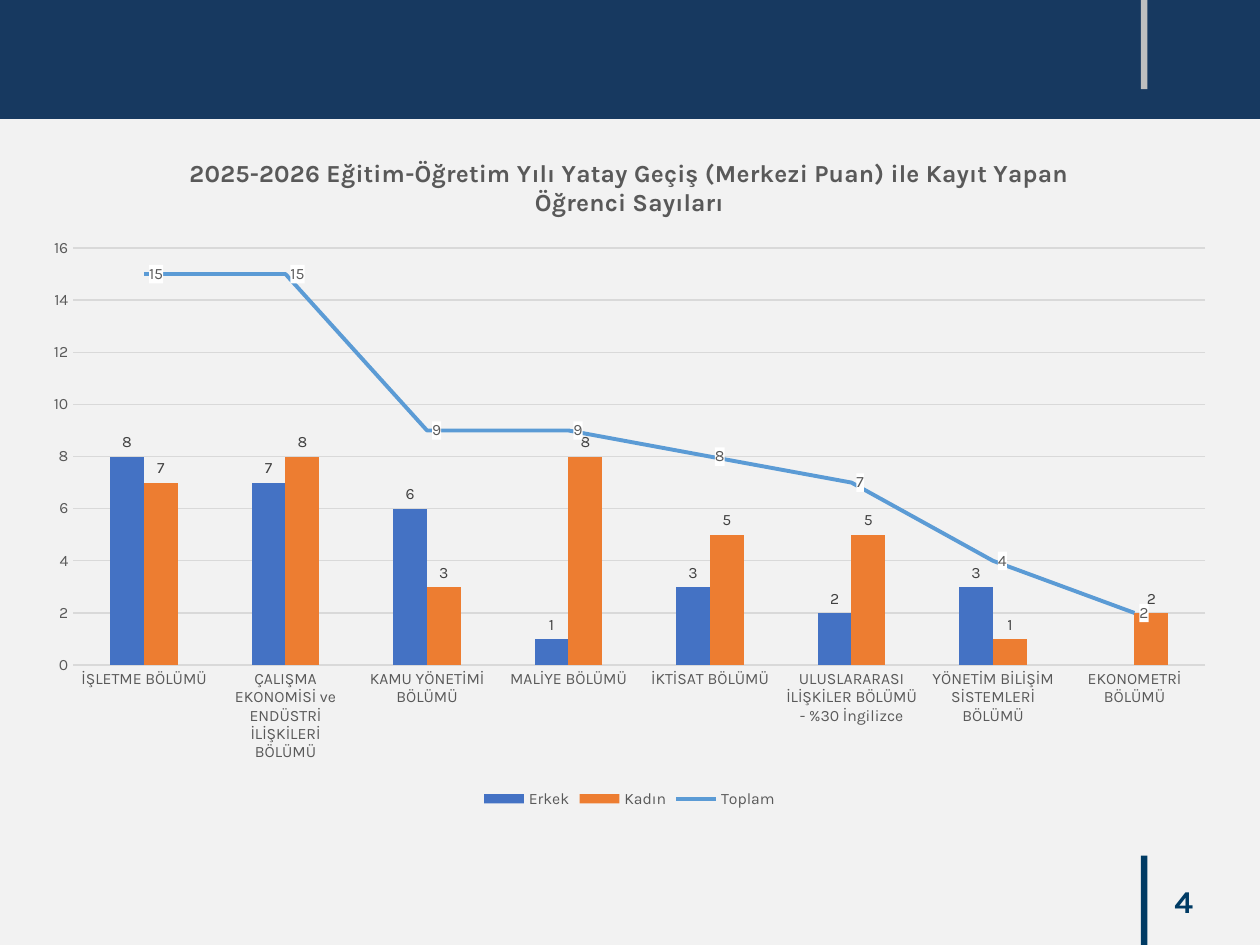
from lxml import etree
from pptx import Presentation
from pptx.chart.data import CategoryChartData
from pptx.dml.color import RGBColor
from pptx.enum.chart import (XL_CHART_TYPE, XL_LABEL_POSITION, XL_LEGEND_POSITION,
                             XL_MARKER_STYLE, XL_TICK_MARK)
from pptx.enum.shapes import MSO_SHAPE
from pptx.enum.text import MSO_ANCHOR, PP_ALIGN
from pptx.oxml import parse_xml
from pptx.oxml.ns import nsdecls, qn
from pptx.util import Cm, Pt

RECTANGLE = MSO_SHAPE.RECTANGLE
CLUSTERED = XL_CHART_TYPE.COLUMN_CLUSTERED
OUTSIDE, RIGHT_OF_POINT = XL_LABEL_POSITION.OUTSIDE_END, XL_LABEL_POSITION.RIGHT
BOTTOM, NO_TICK, NO_MARKER = XL_LEGEND_POSITION.BOTTOM, XL_TICK_MARK.NONE, XL_MARKER_STYLE.NONE
MIDDLE, CENTER, RIGHT = MSO_ANCHOR.MIDDLE, PP_ALIGN.CENTER, PP_ALIGN.RIGHT

COLORS = {"paper": "F2F2F2", "banner": "173960", "navy": "003B64", "silver": "BFBFBF",
          "grid": "D9D9D9", "text": "595959", "label": "404040", "white": "FFFFFF",
          "Erkek": "4472C4", "Kadın": "ED7D31", "Toplam": "5B9BD5"}
FONT = "Karla"
TITLE = "2025-2026 Eğitim-Öğretim Yılı Yatay Geçiş (Merkezi Puan) ile Kayıt Yapan Öğrenci Sayıları"
PAGE_NUMBER = "4"
DEPARTMENTS = [
    ("İŞLETME BÖLÜMÜ", 8, 7, 15),
    ("ÇALIŞMA EKONOMİSİ ve ENDÜSTRİ İLİŞKİLERİ BÖLÜMÜ", 7, 8, 15),
    ("KAMU YÖNETİMİ BÖLÜMÜ", 6, 3, 9),
    ("MALİYE BÖLÜMÜ", 1, 8, 9),
    ("İKTİSAT BÖLÜMÜ", 3, 5, 8),
    ("ULUSLARARASI İLİŞKİLER BÖLÜMÜ - %30 İngilizce", 2, 5, 7),
    ("YÖNETİM BİLİŞİM SİSTEMLERİ BÖLÜMÜ", 3, 1, 4),
    ("EKONOMETRİ BÖLÜMÜ", None, 2, 2),
]
SERIES = ["Erkek", "Kadın", "Toplam"]
BANDS = [
    (0, 0, 25.4, 2.4, "banner"),
    (23, 17.25, 0.13, 1.8, "navy"),
    (23, 0, 0.13, 1.8, "silver"),
]


def rgb(name):
    return RGBColor.from_string(COLORS[name])


def style(font, size=9, color="text", bold=False):
    font.name, font.size, font.bold = FONT, Pt(size), bold
    font.color.rgb = rgb(color)


def write(frame, text, align=CENTER, **look):
    paragraph = frame.paragraphs[0]
    paragraph.alignment = align
    run = paragraph.add_run()
    run.text = text
    style(run.font, **look)


def add_band(slide, left, top, width, height, color):
    band = slide.shapes.add_shape(RECTANGLE, Cm(left), Cm(top), Cm(width), Cm(height))
    band.shadow.inherit = False
    band.fill.solid()
    band.fill.fore_color.rgb = rgb(color)
    band.line.fill.background()


def move_total_to_line(columns):
    total = columns.findall(qn("c:ser"))[-1]
    for bar_setting in total.findall(qn("c:invertIfNegative")):
        total.remove(bar_setting)
    line_plot = parse_xml(f'<c:lineChart {nsdecls("c")}><c:grouping val="standard"/>'
                          '<c:varyColors val="0"/></c:lineChart>')
    line_plot.append(total)
    etree.SubElement(line_plot, qn("c:marker")).set("val", "1")
    for axis in columns.findall(qn("c:axId")):
        etree.SubElement(line_plot, qn("c:axId")).set("val", axis.get("val"))
    columns.addnext(line_plot)


def label_values(series, position, color):
    labels = series.data_labels
    labels.show_value = True
    labels.position = position
    style(labels.font, color=color)


def fill_labels(line_plot, color):
    label_text = line_plot.find(f'.//{qn("c:dLbls")}/{qn("c:txPr")}')
    label_text.addprevious(parse_xml(
        f'<c:spPr {nsdecls("c", "a")}><a:solidFill><a:srgbClr val="{COLORS[color]}"/>'
        '</a:solidFill></c:spPr>'))


def add_enrolment_chart(slide):
    names, *columns = zip(*DEPARTMENTS)
    enrolment = CategoryChartData()
    enrolment.categories = names
    for name, values in zip(SERIES, columns):
        enrolment.add_series(name, values)
    chart = slide.shapes.add_chart(CLUSTERED, Cm(0.6), Cm(2.67), Cm(24.18), Cm(13.72),
                                   enrolment).chart
    style(chart.font)
    write(chart.chart_title.text_frame, TITLE, size=14, bold=True)
    chart.has_legend = True
    chart.legend.position = BOTTOM
    chart.legend.include_in_layout = False
    style(chart.legend.font)

    departments, students = chart.category_axis, chart.value_axis
    for axis in (departments, students):
        axis.major_tick_mark = axis.minor_tick_mark = NO_TICK
        style(axis.tick_labels.font)
    students.format.line.fill.background()
    students.minimum_scale, students.maximum_scale, students.major_unit = 0, 16, 2
    for rule in (departments.format.line, students.major_gridlines.format.line):
        rule.color.rgb = rgb("grid")
        rule.width = Pt(0.75)

    bars = chart.plots[0]
    bars.vary_by_categories = False
    bars.gap_width, bars.overlap = 219, 0
    plot_area = chart.element.find(f'{qn("c:chart")}/{qn("c:plotArea")}')
    move_total_to_line(plot_area.find(qn("c:barChart")))
    for gender in bars.series:
        gender.format.fill.solid()
        gender.format.fill.fore_color.rgb = rgb(gender.name)
        label_values(gender, OUTSIDE, "label")

    total = chart.plots[1].series[0]
    total.smooth = False
    total.marker.style = NO_MARKER
    total.format.line.color.rgb = rgb(total.name)
    total.format.line.width = Pt(2.25)
    label_values(total, RIGHT_OF_POINT, "text")
    fill_labels(plot_area.find(qn("c:lineChart")), "white")


def main():
    deck = Presentation()
    deck.slide_width, deck.slide_height = Cm(25.4), Cm(19.05)
    slide = deck.slides.add_slide(deck.slide_layouts[6])
    slide.background.fill.solid()
    slide.background.fill.fore_color.rgb = rgb("paper")
    for band in BANDS:
        add_band(slide, *band)
    number = slide.shapes.add_textbox(Cm(18.6), Cm(17.65), Cm(5.7), Cm(1.02)).text_frame
    number.word_wrap = True
    number.vertical_anchor = MIDDLE
    write(number, PAGE_NUMBER, align=RIGHT, size=18, color="navy", bold=True)
    add_enrolment_chart(slide)
    deck.save("out.pptx")


if __name__ == "__main__":
    main()
